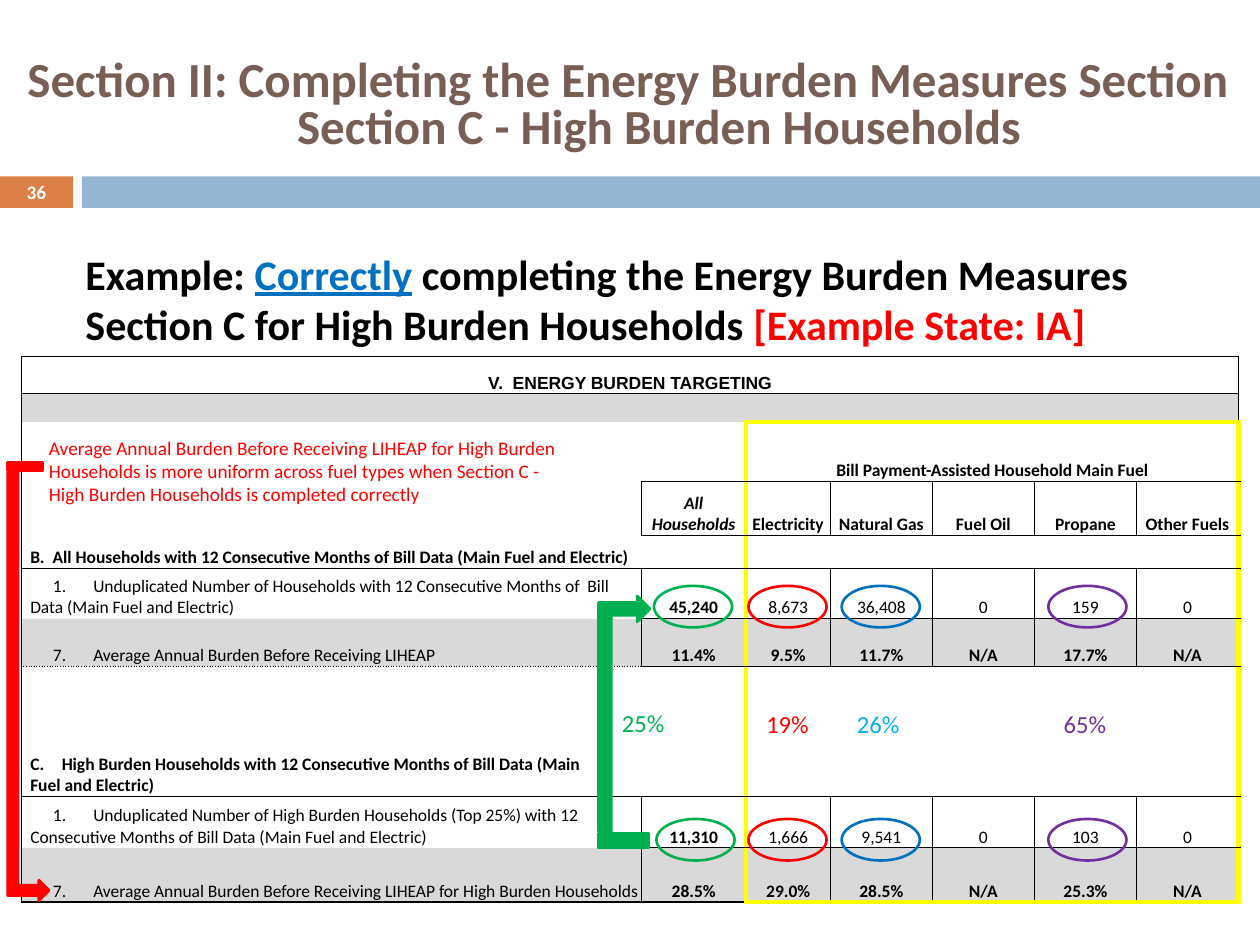
import collections

import pptx
import pptx.dml.color
import pptx.enum.dml
import pptx.enum.shapes
import pptx.enum.text
import pptx.oxml
import pptx.oxml.ns
import pptx.util
import lxml.etree

Inches = pptx.util.Inches
Pt = pptx.util.Pt
RGBColor = pptx.dml.color.RGBColor
qn = pptx.oxml.ns.qn
ALIGN = pptx.enum.text.PP_ALIGN
ANCHOR = pptx.enum.text.MSO_ANCHOR
SHAPE = pptx.enum.shapes.MSO_SHAPE

BLACK = RGBColor(0x00, 0x00, 0x00)
WHITE = RGBColor(0xFF, 0xFF, 0xFF)
GREY = RGBColor(0xD9, 0xD9, 0xD9)
BROWN = RGBColor(0x77, 0x5F, 0x55)
ORANGE = RGBColor(0xDD, 0x80, 0x47)
PALE_BLUE = RGBColor(0x94, 0xB6, 0xD2)
YELLOW = RGBColor(0xFF, 0xFF, 0x00)
RED = RGBColor(0xFF, 0x00, 0x00)
GREEN = RGBColor(0x00, 0xB0, 0x50)
BLUE = RGBColor(0x00, 0x70, 0xC0)
SKY = RGBColor(0x00, 0xB0, 0xF0)
PURPLE = RGBColor(0x70, 0x30, 0xA0)

Box = collections.namedtuple("Box", "left top width height")

COLUMN_WIDTHS = [4.92, 0.83, 0.67, 0.81, 0.81, 0.81, 0.81]
ROW_HEIGHTS = [0.29, 0.23, 0.47, 0.43, 0.26, 0.4, 0.38, 0.41, 0.62, 0.41, 0.43]
BOXED_ROWS = {3, 5, 6, 9, 10}
GREY_ROWS = {1, 6, 10}
WHITE_CELLS = {(4, 0), (8, 0)} | {(7, column) for column in range(7)}
SPANS = {(0, 0): 7, (2, 2): 5}
LABELS = {
    4: "B.  All Households with 12 Consecutive Months of Bill Data (Main Fuel and Electric)",
    5: "1.\tUnduplicated Number of Households with 12 Consecutive Months of  Bill Data "
       "(Main Fuel and Electric)",
    6: "7.\tAverage Annual Burden Before Receiving LIHEAP",
    9: "1.\tUnduplicated Number of High Burden Households (Top 25%) with 12 "
       "Consecutive Months of Bill Data (Main Fuel and Electric)",
    10: "7.\tAverage Annual Burden Before Receiving LIHEAP for High Burden Households",
}
VALUES = {
    3: ["All Households", "Electricity", "Natural Gas", "Fuel Oil", "Propane", "Other Fuels"],
    5: ["45,240", "8,673", "36,408", "0", "159", "0"],
    6: ["11.4%", "9.5%", "11.7%", "N/A", "17.7%", "N/A"],
    9: ["11,310", "1,666", "9,541", "0", "103", "0"],
    10: ["28.5%", "29.0%", "28.5%", "N/A", "25.3%", "N/A"],
}


def inside(box, left, top, width, height):
    return Box(box.left + left, box.top + top, width, height)


def lengths(box):
    return [Inches(value) for value in box]


def add_run(paragraph, text, size, color, bold=False, name="Calibri"):
    run = paragraph.add_run()
    run.text = text
    run.font.name, run.font.size, run.font.bold = name, Pt(size), bold
    run.font.color.rgb = color
    return run


def indent(paragraph, margin, first):
    properties = paragraph._p.get_or_add_pPr()
    properties.set("marL", str(Inches(margin)))
    properties.set("indent", str(Inches(first)))
    return properties


def add_text(slide, box, anchor=ANCHOR.TOP, align=ALIGN.LEFT):
    frame = slide.shapes.add_textbox(*lengths(box)).text_frame
    frame.word_wrap = True
    frame.vertical_anchor = anchor
    frame.paragraphs[0].alignment = align
    return frame.paragraphs[0]


def add_shape(slide, kind, box, fill=None, line=None):
    shape = slide.shapes.add_shape(kind, *lengths(box))
    shape.shadow.inherit = False
    if fill is None:
        shape.fill.background()
    else:
        shape.fill.solid()
        shape.fill.fore_color.rgb = fill
    if line is None:
        shape.line.fill.background()
    else:
        shape.line.color.rgb = line
        shape.line.width = Pt(1.5)
    return shape


def add_header(slide, box):
    # Coloured band with the slide number
    add_shape(slide, SHAPE.RECTANGLE, inside(box, 0, 1.4, 0.58, 0.25), ORANGE)
    add_shape(slide, SHAPE.RECTANGLE, inside(box, 0.65, 1.4, 9.35, 0.25), PALE_BLUE)
    number = add_text(slide, inside(box, 0, 1.39, 0.58, 0.27), ANCHOR.MIDDLE, ALIGN.CENTER)
    add_run(number, "36", 11, WHITE, True)
    # Title with a hanging second line
    title = add_text(slide, inside(box, 0, 0.31, 10, 1.08), ANCHOR.MIDDLE)
    title.line_spacing = 0.8
    indent(title, 2.26, -2.14)
    add_run(title, "Section II: Completing the Energy Burden Measures Section "
                   "Section C - High Burden Households", 28, BROWN, True)


def add_example(slide, box):
    paragraph = add_text(slide, box)
    add_run(paragraph, "Example: ", 24, BLACK, True)
    add_run(paragraph, "Correctly", 24, BLUE, True).font.underline = True
    add_run(paragraph, " completing the Energy Burden Measures Section C for "
                       "High Burden Households ", 24, BLACK, True)
    add_run(paragraph, "[Example State: IA]", 24, RED, True)


def horizontal_line(edge, column):
    """Colour, width and dash of the rule above row number `edge`."""
    if edge == 8 or (edge in (2, 3, 4, 6, 10) and column == 0) or (edge, column) == (2, 1):
        return None
    if edge in (2, 11) and column >= 2:
        return YELLOW, 3, "solid"
    dash = "sysDot" if (edge, column) == (7, 0) else "solid"
    return BLACK, 1 if edge in (0, 11) else 0.5, dash


def vertical_line(edge, row):
    """Colour, width and dash of the rule left of column number `edge`."""
    if edge == 0 or (edge == 7 and row < 2):
        return BLACK, 1, "solid"
    if edge in (2, 7) and row >= 2:
        return YELLOW, 3, "solid"
    return (BLACK, 0.5, "solid") if row in BOXED_ROWS else None


def style_cell(cell, row, column):
    cell.margin_left = cell.margin_right = cell.margin_top = cell.margin_bottom = 0
    cell.vertical_anchor = ANCHOR.BOTTOM
    right = column + SPANS.get((row, column), 1)
    lines = {"lnL": vertical_line(column, row), "lnR": vertical_line(right, row),
             "lnT": horizontal_line(row, column), "lnB": horizontal_line(row + 1, column)}
    for tag, line in lines.items():
        border = lxml.etree.SubElement(cell._tc.get_or_add_tcPr(), qn("a:" + tag))
        if line is None:
            lxml.etree.SubElement(border, qn("a:noFill"))
            continue
        color, width, dash = line
        border.set("w", str(Pt(width)))
        solid = lxml.etree.SubElement(border, qn("a:solidFill"))
        lxml.etree.SubElement(solid, qn("a:srgbClr")).set("val", str(color))
        lxml.etree.SubElement(border, qn("a:prstDash")).set("val", dash)
    if row in GREY_ROWS or (row, column) in WHITE_CELLS:
        cell.fill.solid()
        cell.fill.fore_color.rgb = GREY if row in GREY_ROWS else WHITE
    else:
        cell.fill.background()
    # Small type keeps the empty rows low
    paragraph = cell.text_frame.paragraphs[0]
    lxml.etree.SubElement(paragraph._p, qn("a:endParaRPr")).set("sz", "1000")


def fill_label(cell, row):
    paragraph = cell.text_frame.paragraphs[0]
    numbered = "\t" in LABELS[row]
    properties = indent(paragraph, 0.07, 0.18 if numbered else 0)
    if numbered:
        tabs = lxml.etree.SubElement(properties, qn("a:tabLst"))
        tab = lxml.etree.SubElement(tabs, qn("a:tab"))
        tab.set("pos", str(Inches(0.48)))
        tab.set("algn", "l")
    add_run(paragraph, LABELS[row], 10, BLACK, not numbered)


def add_centred(cell, text, bold=True, name="Calibri"):
    paragraph = cell.text_frame.paragraphs[0]
    paragraph.alignment = ALIGN.CENTER
    return add_run(paragraph, text, 10, BLACK, bold, name)


def add_burden_table(slide, box):
    table = slide.shapes.add_table(len(ROW_HEIGHTS), len(COLUMN_WIDTHS), *lengths(box)).table
    table.first_row = table.horz_banding = False
    for column, width in zip(table.columns, COLUMN_WIDTHS):
        column.width = Inches(width)
    for row, height in zip(table.rows, ROW_HEIGHTS):
        row.height = Inches(height)
    for row in range(len(ROW_HEIGHTS)):
        for column in range(len(COLUMN_WIDTHS)):
            style_cell(table.cell(row, column), row, column)
    for (row, column), span in SPANS.items():
        table.cell(row, column).merge(table.cell(row, column + span - 1))
    # Headings, labels and values
    add_centred(table.cell(0, 0), "V.  ENERGY BURDEN TARGETING", name="Arial")
    add_centred(table.cell(2, 2), "Bill Payment-Assisted Household Main Fuel")
    for row in LABELS:
        fill_label(table.cell(row, 0), row)
    for row, values in VALUES.items():
        for column, value in enumerate(values, 1):
            run = add_centred(table.cell(row, column), value, column == 1 or row not in (5, 9))
            run.font.italic = (row, column) == (3, 1)
    # Lettered heading of section C
    frame = table.cell(8, 0).text_frame
    heading, rest = frame.paragraphs[0], frame.add_paragraph()
    bullet = lxml.etree.SubElement(indent(heading, 0.32, -0.25), qn("a:buAutoNum"))
    bullet.set("type", "alphaUcPeriod")
    bullet.set("startAt", "3")
    add_run(heading, "High Burden Households with 12 Consecutive Months of Bill Data (Main",
            10, BLACK, True)
    indent(rest, 0.07, 0)
    add_run(rest, "Fuel and Electric)", 10, BLACK, True)


def add_bracket(slide, box, foot, color, flipped):
    """Upright bent arrow that fills the box, with a bar at its tail."""
    left = box.left + (box.width - box.height) / 2
    top = box.top + (box.height - box.width) / 2
    arrow = add_shape(slide, SHAPE.BENT_UP_ARROW, Box(left, top, box.height, box.width),
                      color, color)
    arrow.rotation = 90
    if flipped:
        arrow._element.spPr.find(qn("a:xfrm")).set("flipH", "1")
    add_shape(slide, SHAPE.RECTANGLE, foot, color, color)


def add_annotations(slide, box):
    # Ringed household counts
    for top, green_left in ((1.82, 5.02), (3.67, 5.04)):
        rings = ((green_left, GREEN), (5.77, RED), (6.51, BLUE), (8.15, PURPLE))
        for left, color in rings:
            add_shape(slide, SHAPE.OVAL, inside(box, left, top, 0.62, 0.33), line=color)
    # Share of high burden households
    for left, top, width, text, color in ((4.52, 2.74, 0.83, "25%", GREEN),
                                          (5.77, 2.75, 0.62, "19%", RED),
                                          (6.49, 2.75, 0.62, "26%", SKY),
                                          (8.1, 2.75, 0.68, "65%", PURPLE)):
        share = add_text(slide, inside(box, left, top, width, 0.34), align=ALIGN.CENTER)
        add_run(share, text, 14, color)
    add_bracket(slide, inside(box, 4.58, 1.9, 0.41, 1.87),
                inside(box, 4.58, 3.78, 0.4, 0.12), GREEN, True)
    # Remark on uniform burden
    remark = add_text(slide, inside(box, 0.12, 0.58, 4.34, 0.66))
    add_run(remark, "Average Annual Burden Before Receiving LIHEAP for High Burden Households "
                    "is more uniform across fuel types when Section C - High Burden "
                    "Households is completed correctly", 11, RED)
    add_bracket(slide, inside(box, -0.11, 0.92, 0.33, 3.4),
                inside(box, -0.11, 0.84, 0.28, 0.07), RED, False)


def main():
    presentation = pptx.Presentation()
    presentation.slide_width, presentation.slide_height = Inches(10), Inches(7.5)
    slide = presentation.slides.add_slide(presentation.slide_layouts[6])
    table_box = Box(0.17, 2.83, 9.67, 4.34)
    add_header(slide, Box(0, 0, 10, 1.65))
    add_example(slide, Box(0.58, 1.92, 9.25, 0.9))
    add_burden_table(slide, table_box)
    add_annotations(slide, table_box)
    presentation.save("out.pptx")


if __name__ == "__main__":
    main()
